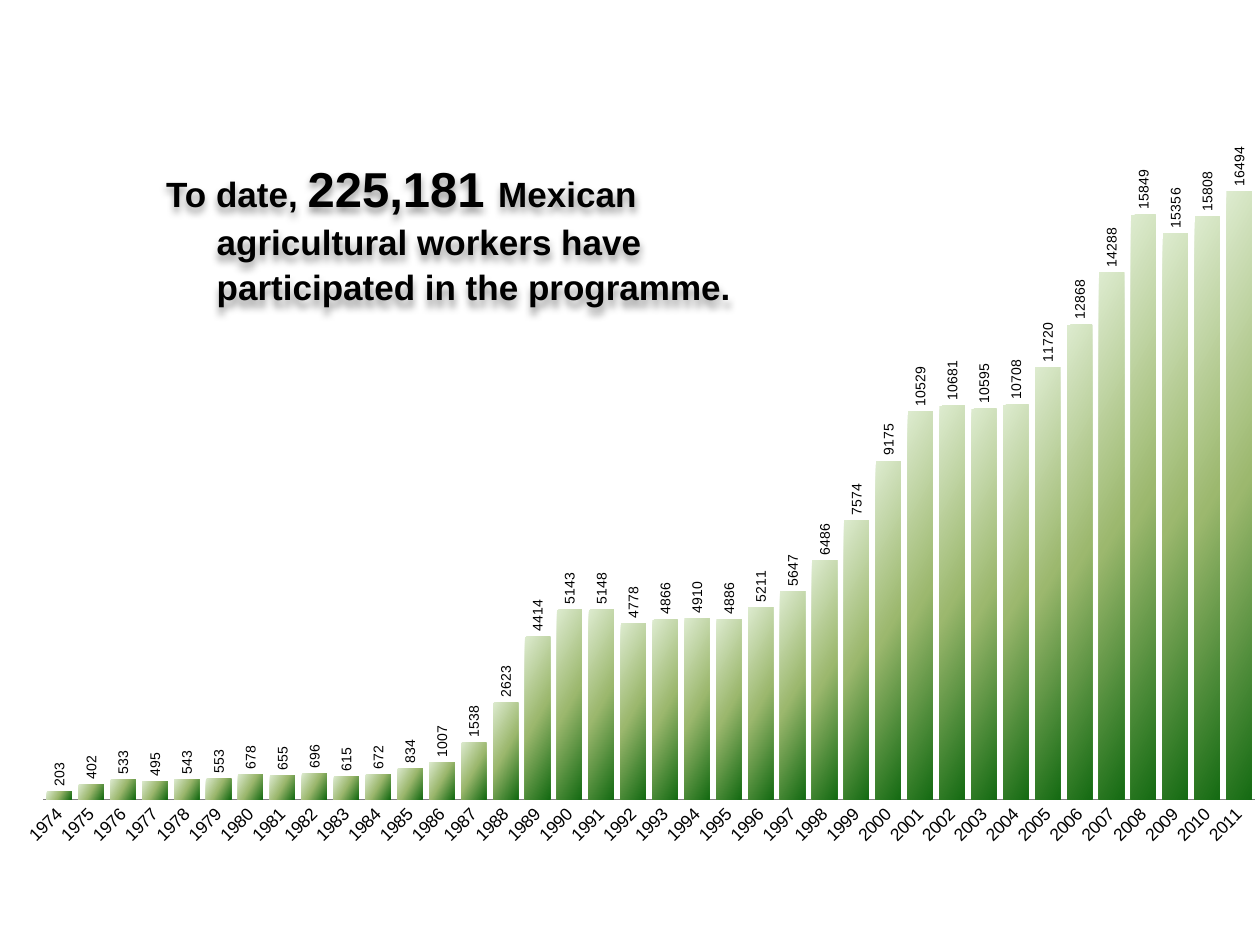
from dataclasses import dataclass

from lxml.etree import SubElement
from pptx import Presentation
from pptx.chart.data import CategoryChartData
from pptx.dml.color import RGBColor
from pptx.enum.chart import XL_CHART_TYPE, XL_LABEL_POSITION, XL_TICK_MARK
from pptx.oxml.ns import qn
from pptx.util import Cm, Pt

COLORS = {"text": "000000", "axis": "808080", "bar_top": "DDEBCF",
          "bar_middle": "9CB86E", "bar_bottom": "156B13"}
FONT = "Arial"
FIRST_YEAR = 1974
WORKERS = [203, 402, 533, 495, 543, 553, 678, 655, 696, 615, 672, 834, 1007,
           1538, 2623, 4414, 5143, 5148, 4778, 4866, 4910, 4886, 5211, 5647,
           6486, 7574, 9175, 10529, 10681, 10595, 10708, 11720, 12868, 14288,
           15849, 15356, 15808, 16494]


@dataclass
class TextRun:
    text: str
    size: int


MESSAGE = [
    TextRun("To date, ", 20),
    TextRun("225,181 ", 28),
    TextRun("Mexican agricultural workers have participated in the programme.", 20),
]


def rgb(name: str) -> RGBColor:
    return RGBColor.from_string(COLORS[name])


def add_node(parent, tag: str, **attrs):
    return SubElement(parent, qn(tag), {k: str(v) for k, v in attrs.items()})


def set_font(font, size: int, bold: bool = False) -> None:
    font.name, font.size, font.bold = FONT, Pt(size), bold
    font.color.rgb = rgb("text")


def rotate_text(element, degrees: int) -> None:
    """Turn the text of a chart part; its font must be set already."""
    body = element.find(qn("c:txPr")).find(qn("a:bodyPr"))
    body.set("rot", str(degrees * 60000))
    body.set("vert", "horz")


def fill_bars(series) -> None:
    grad = add_node(series._element.get_or_add_spPr(), "a:gradFill", rotWithShape=1)
    stops = add_node(grad, "a:gsLst")
    for pos, name in ((0, "bar_top"), (50, "bar_middle"), (100, "bar_bottom")):
        stop = add_node(stops, "a:gs", pos=pos * 1000)
        add_node(stop, "a:srgbClr", val=COLORS[name])
    add_node(grad, "a:lin", ang=30 * 60000, scaled=0)


def place_plot(chart, x: float, y: float, w: float, h: float) -> None:
    """Fix the inner plot area, as fractions of the chart."""
    area = chart._chartSpace.chart.plotArea
    old = area.find(qn("c:layout"))
    if old is not None:
        area.remove(old)
    layout = add_node(area, "c:layout")
    area.insert(0, layout)
    manual = add_node(layout, "c:manualLayout")
    for tag, val in (("layoutTarget", "inner"), ("xMode", "edge"), ("yMode", "edge"),
                     ("x", x), ("y", y), ("w", w), ("h", h)):
        add_node(manual, f"c:{tag}", val=val)


def add_workers_chart(slide) -> None:
    data = CategoryChartData()
    data.categories = [str(FIRST_YEAR + i) for i in range(len(WORKERS))]
    data.add_series("Series 1", WORKERS)
    chart = slide.shapes.add_chart(XL_CHART_TYPE.COLUMN_CLUSTERED, Cm(0.51), Cm(2.72),
                                   Cm(24.89), Cm(15.19), data).chart
    chart.has_legend = chart.has_title = False
    set_font(chart.font, 10)
    place_plot(chart, 0.013, 0.001, 0.983, 0.881)

    years = chart.category_axis
    years.major_tick_mark = years.minor_tick_mark = XL_TICK_MARK.NONE
    years.format.line.color.rgb = rgb("axis")
    set_font(years.tick_labels.font, 10)
    rotate_text(years._element, -45)

    values = chart.value_axis
    values.visible = values.has_major_gridlines = False
    values.minimum_scale, values.maximum_scale = 0, 18000

    plot = chart.plots[0]
    plot.gap_width = 27
    plot.vary_by_categories = False
    fill_bars(plot.series[0])
    plot.has_data_labels = True
    labels = plot.data_labels
    labels.show_value = True
    labels.position = XL_LABEL_POSITION.OUTSIDE_END
    set_font(labels.font, 8)
    rotate_text(labels._element, -90)


def add_soft_shadow(sp) -> None:
    effects = add_node(sp._element.spPr, "a:effectLst")
    shadow = add_node(effects, "a:outerShdw", blurRad=Pt(4), dist=Pt(3),
                      dir=90 * 60000, algn="t", rotWithShape=0)
    color = add_node(shadow, "a:srgbClr", val=COLORS["text"])
    add_node(color, "a:alpha", val=40000)


def add_message(slide) -> None:
    sp = slide.shapes.add_textbox(Cm(3.1), Cm(3.33), Cm(13.79), Cm(3.02))
    add_soft_shadow(sp)
    tf = sp.text_frame
    tf.word_wrap = True
    p = tf.paragraphs[0]
    p.line_spacing = Pt(26)
    indent = Cm(1.02)
    pPr = p._p.get_or_add_pPr()
    pPr.set("marL", str(indent))
    pPr.set("indent", str(-indent))
    for part in MESSAGE:
        r = p.add_run()
        r.text = part.text
        set_font(r.font, part.size, bold=True)


def main() -> None:
    prs = Presentation()
    prs.slide_width, prs.slide_height = Cm(25.4), Cm(19.05)
    slide = prs.slides.add_slide(prs.slide_layouts[6])
    add_workers_chart(slide)
    add_message(slide)
    prs.save("out.pptx")


if __name__ == "__main__":
    main()
